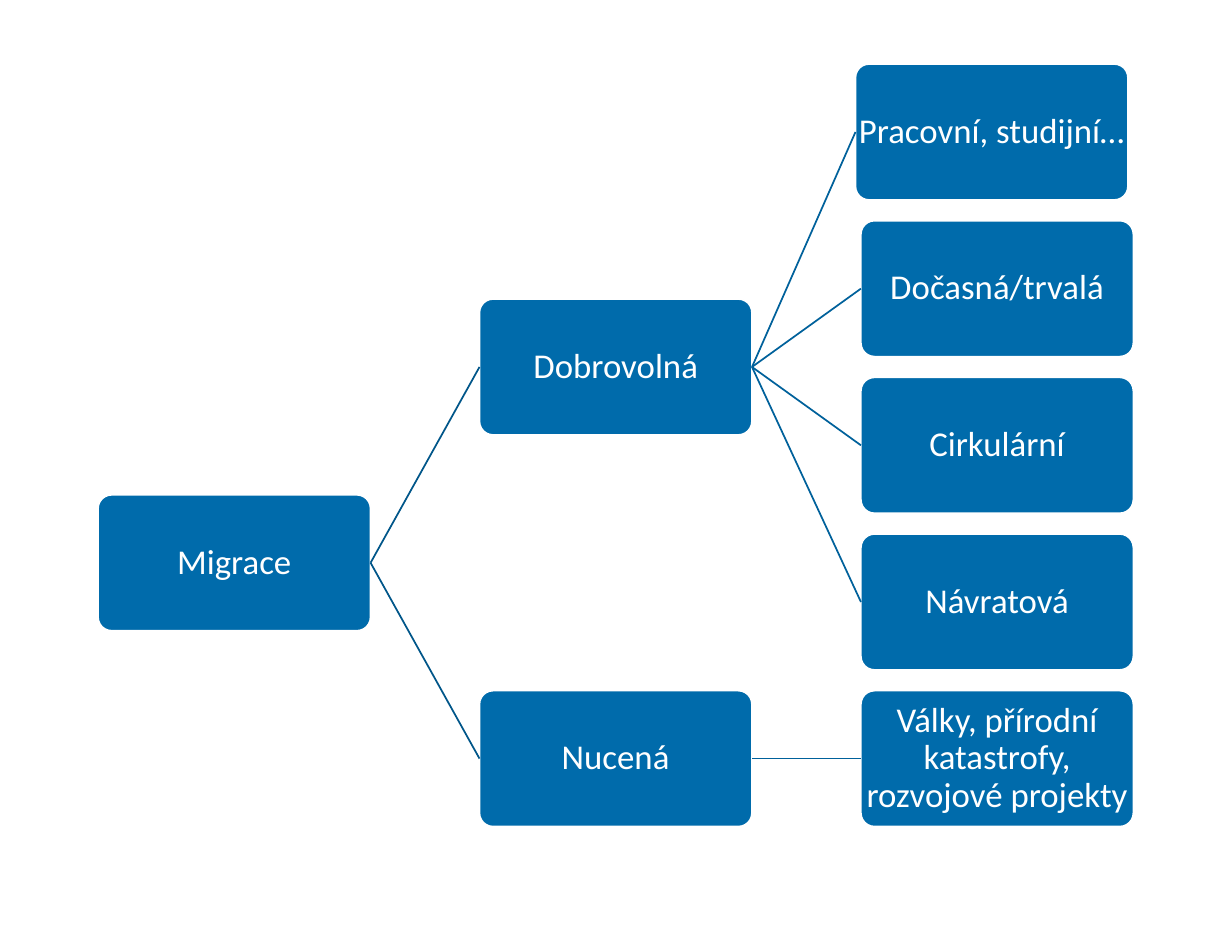
from dataclasses import dataclass

from lxml import etree
from pptx import Presentation
from pptx.dml.color import RGBColor
from pptx.enum.shapes import MSO_CONNECTOR, MSO_SHAPE
from pptx.enum.text import MSO_ANCHOR, PP_ALIGN
from pptx.oxml.ns import qn
from pptx.shapes.autoshape import Shape
from pptx.slide import Slide
from pptx.util import Cm, Pt

ROUND = MSO_SHAPE.ROUNDED_RECTANGLE
STRAIGHT = MSO_CONNECTOR.STRAIGHT
MIDDLE = MSO_ANCHOR.MIDDLE
CENTER = PP_ALIGN.CENTER

BLUE = RGBColor(0x00, 0x6B, 0xAB)
DEEP = RGBColor(0x00, 0x56, 0x89)
MID = RGBColor(0x00, 0x61, 0x9B)
WHITE = RGBColor(0xFF, 0xFF, 0xFF)
FONT = "Calibri"

# Grid of the tree, in centimetres
LEFT, TOP = 1.99, 1.3
COL_STEP, ROW_STEP = 7.74, 3.18
WIDTH, HEIGHT = 5.53, 2.76
LEFT_SIDE, RIGHT_SIDE = 1, 3


@dataclass
class Node:
    text: str
    col: int
    row: float
    parent: str = ""
    shift: float = 0.0
    wrap: bool = True


NODES = [
    Node("Migrace", 0, 2.75),
    Node("Dobrovolná", 1, 1.5, "Migrace"),
    Node("Pracovní, studijní…", 2, 0, "Dobrovolná", shift=-0.11, wrap=False),
    Node("Dočasná/trvalá", 2, 1, "Dobrovolná"),
    Node("Cirkulární", 2, 2, "Dobrovolná"),
    Node("Návratová", 2, 3, "Dobrovolná"),
    Node("Nucená", 1, 4, "Migrace"),
    Node("Války, přírodní katastrofy, rozvojové projekty", 2, 4, "Nucená"),
]


def add_node(slide: Slide, node: Node) -> Shape:
    box = slide.shapes.add_shape(
        ROUND,
        Cm(LEFT + node.col * COL_STEP + node.shift),
        Cm(TOP + node.row * ROW_STEP),
        Cm(WIDTH),
        Cm(HEIGHT),
    )
    box.adjustments[0] = 0.1
    box.shadow.inherit = False
    box.fill.solid()
    box.fill.fore_color.rgb = BLUE
    box.line.color.rgb = WHITE
    box.line.width = Pt(1)

    frame = box.text_frame
    frame.word_wrap = node.wrap
    frame.vertical_anchor = MIDDLE
    frame.margin_left = frame.margin_right = Cm(0)
    frame.margin_top = frame.margin_bottom = Cm(0)
    para = frame.paragraphs[0]
    para.alignment = CENTER
    para.line_spacing = 0.9
    run = para.add_run()
    run.text = node.text
    run.font.name = FONT
    run.font.size = Pt(20)
    run.font.color.rgb = WHITE
    return box


def add_link(slide: Slide, start: Shape, end: Shape, color: RGBColor) -> None:
    link = slide.shapes.add_connector(
        STRAIGHT,
        start.left + start.width,
        start.top + start.height // 2,
        end.left,
        end.top + end.height // 2,
    )
    link.begin_connect(start, RIGHT_SIDE)
    link.end_connect(end, LEFT_SIDE)
    link.line.color.rgb = color
    link.line.width = Pt(1)
    etree.SubElement(link._element.spPr, qn("a:effectLst"))


def main() -> None:
    deck = Presentation()
    deck.slide_width = Cm(25)
    deck.slide_height = Cm(19)
    slide = deck.slides.add_slide(deck.slide_layouts.get_by_name("Blank"))

    boxes: dict[str, Shape] = {}
    for node in NODES:
        boxes[node.text] = add_node(slide, node)
        if node.parent:
            color = DEEP if node.col == 1 else MID
            add_link(slide, boxes[node.parent], boxes[node.text], color)

    deck.save("out.pptx")


if __name__ == "__main__":
    main()
